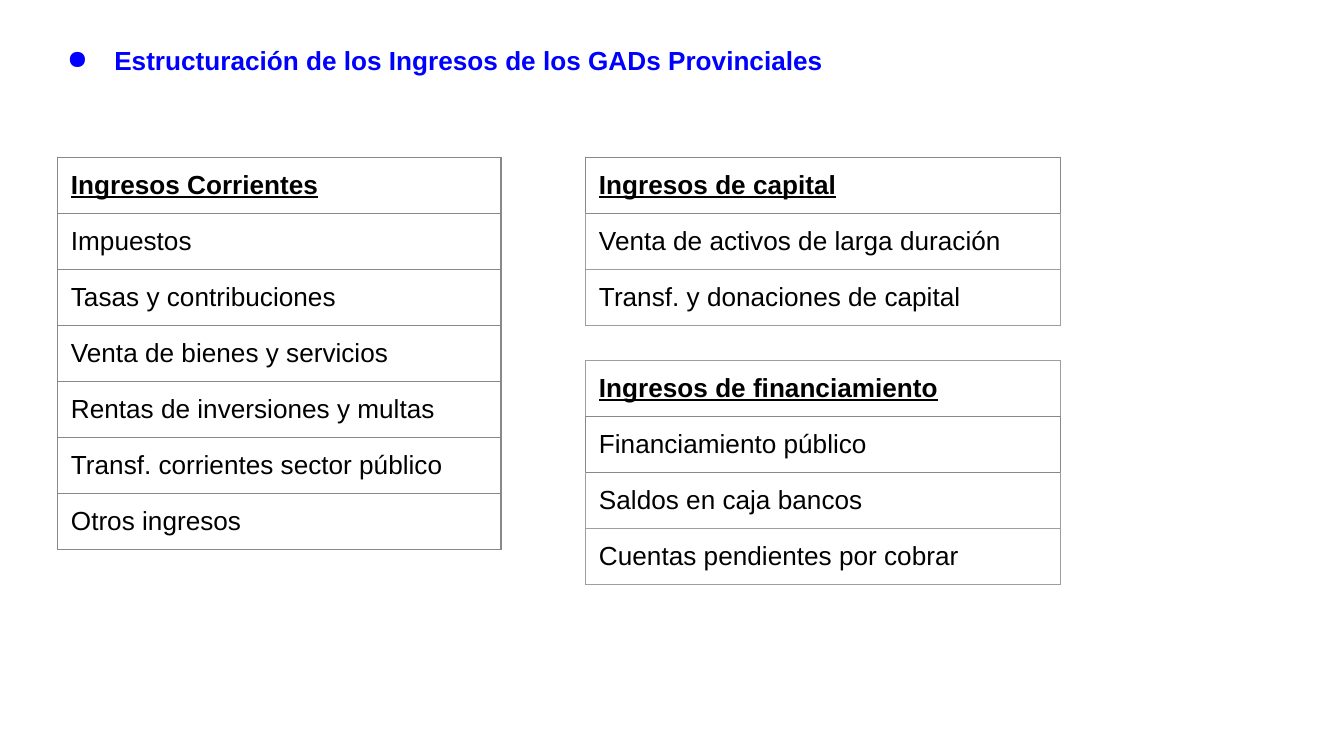
"""Build the slide on the income structure of provincial governments."""
import dataclasses

import lxml.etree
import pptx
import pptx.dml.color
import pptx.oxml.ns
import pptx.util


@dataclasses.dataclass(frozen=True)
class Theme:
    font: str = "Arial"
    size: int = 14
    heading: str = "0000FF"
    text: str = "000000"
    paper: str = "FFFFFF"
    dark_line: str = "888888"
    light_line: str = "9E9E9E"
    line_width: float = 0.75
    margin: float = 0.25
    row_height: float = 1.06


def rgb(value):
    return pptx.dml.color.RGBColor.from_string(value)


def add_element(parent, tag, **attributes):
    element = lxml.etree.SubElement(parent, pptx.oxml.ns.qn(tag))
    for name, value in attributes.items():
        element.set(name, str(value))
    return element


class SlideBuilder:
    def __init__(self, slide, theme):
        self.slide = slide
        self.theme = theme

    def grid(self, left, top, width, rows):
        height = pptx.util.Cm(self.theme.row_height)
        frame = self.slide.shapes.add_table(
            rows, 1, pptx.util.Cm(left), pptx.util.Cm(top), pptx.util.Cm(width), height * rows)
        table = frame.table
        table.first_row = False
        table.horz_banding = False
        for row in table.rows:
            row.height = height
        return table

    def label_cell(self, cell, text, color, bold, underline=False):
        margin = pptx.util.Cm(self.theme.margin)
        cell.margin_left = cell.margin_right = margin
        cell.margin_top = cell.margin_bottom = margin
        cell.text_frame.text = text
        font = cell.text_frame.paragraphs[0].runs[0].font
        font.name = self.theme.font
        font.size = pptx.util.Pt(self.theme.size)
        font.bold = bold
        font.underline = underline
        font.color.rgb = rgb(color)

    def borders(self, cell, colors):
        properties = cell._tc.get_or_add_tcPr()
        for position, (side, color) in enumerate(zip("LRTB", colors)):
            line = add_element(properties, f"a:ln{side}", w=pptx.util.Pt(self.theme.line_width))
            if color:
                add_element(add_element(line, "a:solidFill"), "a:srgbClr", val=color)
            else:
                add_element(line, "a:noFill")
            properties.insert(position, line)

    def heading(self, left, top, width, text):
        cell = self.grid(left, top, width, 1).cell(0, 0)
        self.label_cell(cell, text, self.theme.heading, bold=True)
        cell.fill.background()
        self.borders(cell, [None] * 4)
        properties = cell.text_frame.paragraphs[0]._p.get_or_add_pPr()
        properties.set("marL", str(pptx.util.Cm(1.27)))
        properties.set("indent", str(pptx.util.Cm(-0.89)))
        add_element(add_element(properties, "a:buClr"), "a:srgbClr", val=self.theme.heading)
        add_element(properties, "a:buChar", char="●")

    def income_table(self, left, top, width, labels, dark_rows):
        table = self.grid(left, top, width, len(labels))

        def line_color(*rows):
            is_dark = any(row in dark_rows for row in rows)
            return self.theme.dark_line if is_dark else self.theme.light_line

        for row, label in enumerate(labels):
            cell = table.cell(row, 0)
            is_title = row == 0
            self.label_cell(cell, label, self.theme.text, bold=is_title, underline=is_title)
            cell.fill.solid()
            cell.fill.fore_color.rgb = rgb(self.theme.paper)
            side = line_color(row)
            self.borders(cell, [side, side, line_color(row - 1, row), line_color(row, row + 1)])


def main():
    deck = pptx.Presentation()
    deck.slide_width = pptx.util.Cm(25.4)
    deck.slide_height = pptx.util.Cm(14.29)
    builder = SlideBuilder(deck.slides.add_slide(deck.slide_layouts[6]), Theme())

    builder.heading(0.64, 0.64, 17.86, "Estructuración de los Ingresos de los GADs Provinciales")
    current_income = [
        "Ingresos Corrientes",
        "Impuestos",
        "Tasas y contribuciones",
        "Venta de bienes y servicios",
        "Rentas de inversiones y multas",
        "Transf. corrientes sector público",
        "Otros ingresos",
    ]
    capital_income = [
        "Ingresos de capital",
        "Venta de activos de larga duración",
        "Transf. y donaciones de capital",
    ]
    financing_income = [
        "Ingresos de financiamiento",
        "Financiamiento público",
        "Saldos en caja bancos",
        "Cuentas pendientes por cobrar",
    ]
    builder.income_table(1.09, 2.97, 8.38, current_income, range(len(current_income)))
    builder.income_table(11.07, 2.97, 8.97, capital_income, {0})
    builder.income_table(11.07, 6.81, 8.97, financing_income, {1})
    deck.save("out.pptx")


if __name__ == "__main__":
    main()
